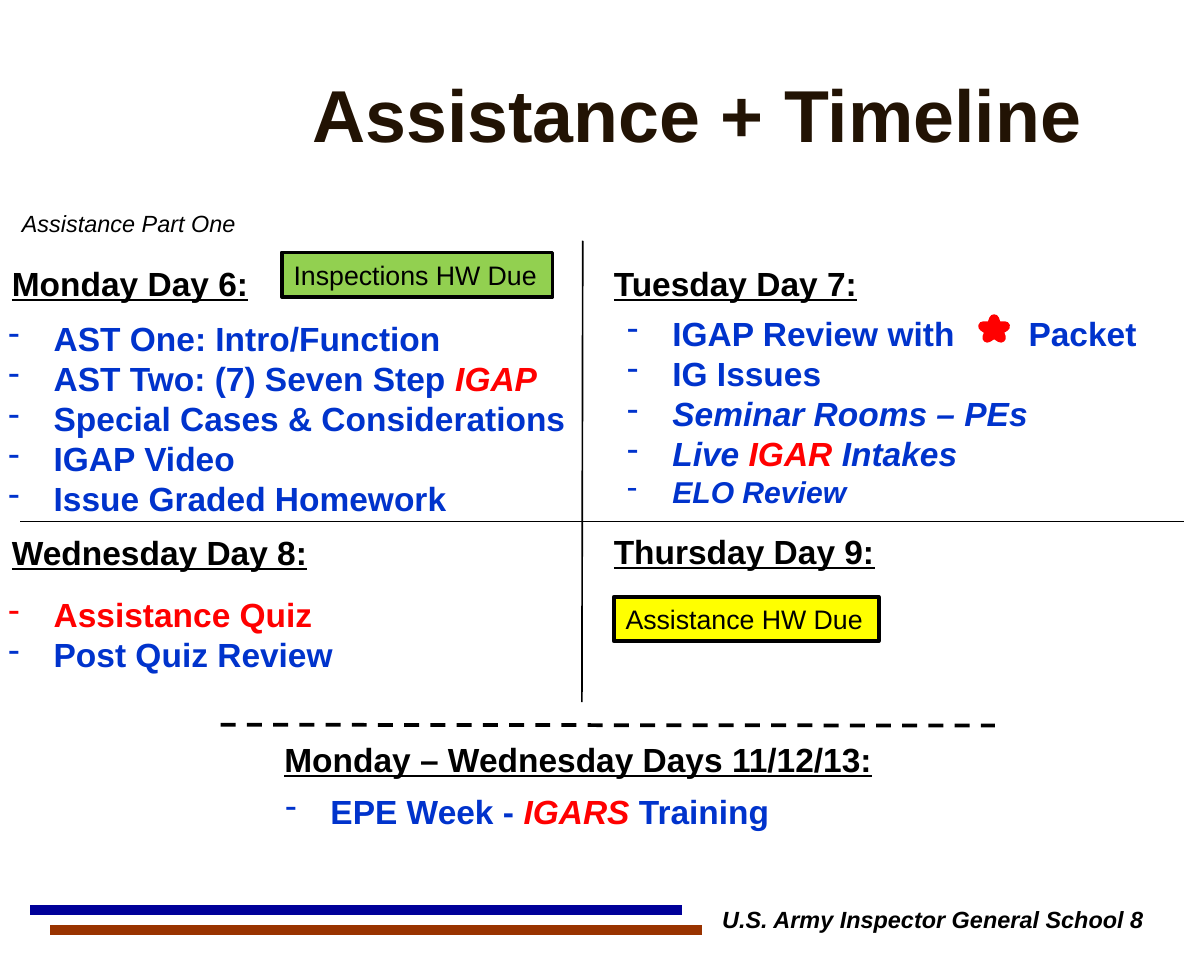
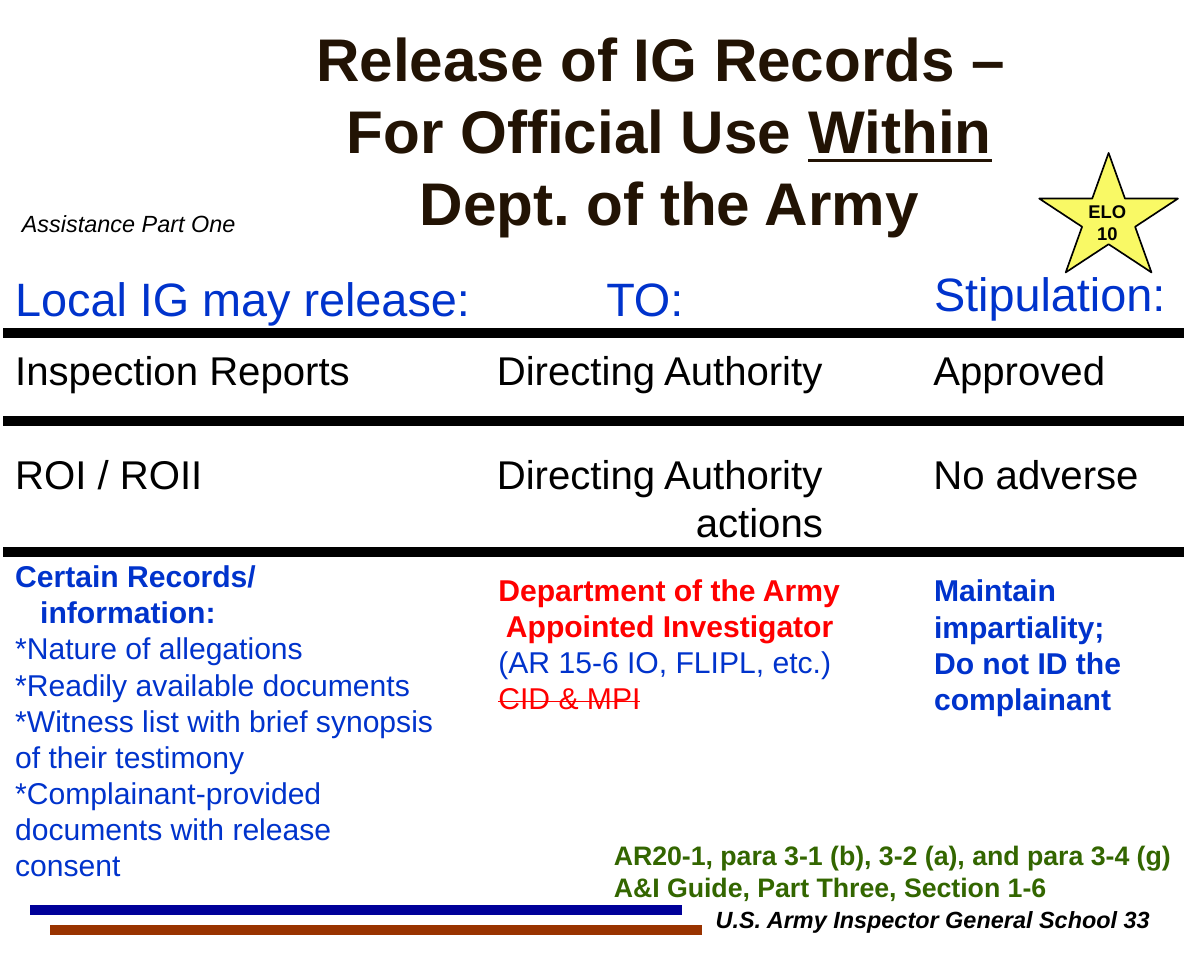
from lxml.etree import SubElement
from pptx import Presentation
from pptx.dml.color import RGBColor
from pptx.enum.dml import MSO_LINE
from pptx.enum.shapes import MSO_CONNECTOR, MSO_SHAPE
from pptx.enum.text import MSO_ANCHOR, MSO_AUTO_SIZE, PP_ALIGN
from pptx.oxml.ns import qn
from pptx.util import Pt

FONT = "Arial"
COLORS = {
    "black": "000000", "title": "221304", "navy": "000099", "rust": "993300",
    "blue": "0033CC", "red": "FF0000", "green": "92D050", "yellow": "FFFF00",
    "star": "F9F965", "reference": "336600",
}
HANG = 27  # hanging indent of the dashed lists


def rgb(name):
    return RGBColor.from_string(COLORS[name])


# Text
def style_font(font, size=None, color=None, bold=None, italic=None, underline=None):
    if size:
        font.name = FONT
        font.size = Pt(size)
    if color:
        font.color.rgb = rgb(color)
    if bold is not None:
        font.bold = bold
    if italic is not None:
        font.italic = italic
    if underline is not None:
        font.underline = underline


def add_span(para, text, strike=False, **look):
    for number, piece in enumerate(text.split("\v")):
        if number:
            para.add_line_break()
        if piece:
            span = para.add_run()
            span.text = piece
            style_font(span.font, **look)
            if strike:
                span.font._element.set("strike", "sngStrike")


def format_para(para, hang=0, bullet=None, tabs=()):
    properties = para._p.get_or_add_pPr()
    if hang:
        properties.set("marL", str(Pt(hang)))
        properties.set("indent", str(-Pt(hang)))
    if bullet:
        SubElement(properties, qn("a:buChar")).set("char", bullet)
    if tabs:
        stops = SubElement(properties, qn("a:tabLst"))
        for position in tabs:
            stop = SubElement(stops, qn("a:tab"))
            stop.set("pos", str(Pt(position)))
            stop.set("algn", "l")


def write(frame, lines, size, color, align=PP_ALIGN.LEFT, before=0, **look):
    """Each line is a string or (spans, overrides); a span is a string or (text, look)."""
    for number, line in enumerate(lines):
        para = frame.paragraphs[0] if number == 0 else frame.add_paragraph()
        spans, extra = line if isinstance(line, tuple) else ([line], {})
        settings = {"size": size, "color": color, **look, **extra}
        layout = {key: settings.pop(key) for key in ("hang", "bullet", "tabs")
                  if key in settings}
        para.alignment = align
        if number and before:
            para.space_before = Pt(before)
        format_para(para, **layout)
        style_font(para.font, **settings)
        for span in spans:
            text, own = span if isinstance(span, tuple) else (span, {})
            add_span(para, text, **own)


def add_text(page, box, lines, size, color="black", wrap=True, **look):
    shape = page.shapes.add_textbox(*map(Pt, box))
    shape.text_frame.word_wrap = wrap
    write(shape.text_frame, lines, size, color, **look)


# Lines and shapes
def add_line(page, start, end, width, color="black", dash=None):
    line = page.shapes.add_connector(MSO_CONNECTOR.STRAIGHT, *map(Pt, start + end))
    line.line.color.rgb = rgb(color)
    line.line.width = Pt(width)
    if dash:
        line.line.dash_style = dash
    SubElement(line._element.spPr, qn("a:effectLst"))


def add_shape(page, kind, box, fill, outline, width):
    shape = page.shapes.add_shape(kind, *map(Pt, box))
    shape.shadow.inherit = False
    shape.fill.solid()
    shape.fill.fore_color.rgb = rgb(fill)
    shape.line.color.rgb = rgb(outline)
    shape.line.width = Pt(width)
    return shape


def add_due_label(page, box, text, fill):
    label = add_shape(page, MSO_SHAPE.RECTANGLE, box, fill, "black", 2.25)
    label.text_frame.word_wrap = False
    write(label.text_frame, [text], 16, "black")


# Shared page frame
def add_page(deck, number, title_box, title_spans, title_size):
    page = deck.slides.add_slide(deck.slide_layouts[5])
    add_line(page, (18, 544.5), (408, 544.5), 6, "navy")
    add_line(page, (30, 556.5), (420, 556.5), 6, "rust")
    add_text(page, (6, 121.5, 324, 38), ["Assistance Part One"], 14, italic=True)
    add_text(page, (396, 538, 324, 38), [f"U.S. Army Inspector General School {number}"],
             14, align=PP_ALIGN.CENTER, bold=True, italic=True)
    title = page.shapes.title
    title.left, title.top, title.width, title.height = map(Pt, title_box)
    frame = title.text_frame
    frame.word_wrap = True
    frame.auto_size = MSO_AUTO_SIZE.NONE
    frame.vertical_anchor = MSO_ANCHOR.MIDDLE
    write(frame, [(title_spans, {})], title_size, "title", PP_ALIGN.CENTER, bold=True)
    return page


# One day of the timeline: underlined heading with a dashed list below
def add_day(page, corner, heading, width, items=(), list_box=None):
    left, top = corner
    add_text(page, (left, top, width, 31.5), [heading], 20, wrap=False,
             bold=True, underline=True)
    if items:
        shift, drop, list_width, list_height = list_box
        add_text(page, (left + shift, top + drop, list_width, list_height), items, 20,
                 "blue", bold=True, hang=HANG, bullet="-")


def build_timeline(deck):
    page = add_page(deck, 8, (132, 19.5, 570, 96), ["Assistance + Timeline"], 44)
    red_italic = {"color": "red", "italic": True}
    # Grid
    add_line(page, (348.5, 144), (348, 420), 1)
    add_line(page, (12, 312), (708, 312), 1)
    add_line(page, (132, 433.5), (595, 434), 2.25, dash=MSO_LINE.DASH)
    # Days
    add_day(page, (0, 153.5), "Monday Day 6:", 157, [
        "AST One: Intro/Function",
        (["AST Two: (7) Seven Step ", ("IGAP", red_italic)], {}),
        "Special Cases & Considerations",
        "IGAP Video",
        "Issue Graded Homework",
    ], (-2, 33, 356, 128))
    add_day(page, (360, 153.5), "Tuesday Day 7:", 161, [
        (["IGAP Review with\tPacket"], {"tabs": [240]}),
        "IG Issues",
        (["Seminar Rooms – PEs"], {"italic": True}),
        (["Live ", ("IGAR ", {"color": "red"}), "Intakes"], {"italic": True}),
        (["ELO Review"], {"italic": True, "size": 18}),
    ], (8, 30, 349, 126))
    add_day(page, (0, 314.5), "Wednesday Day 8:", 193, [
        (["Assistance Quiz"], {"color": "red"}),
        "Post Quiz Review",
    ], (-2, 37.5, 215, 55.5))
    add_day(page, (360, 314), "Thursday Day 9:", 171.5)
    add_day(page, (163, 438.5), "Monday – Wednesday Days 11/12/13:", 368.5, [
        (["EPE Week - ", ("IGARS", red_italic), " Training"], {}),
    ], (0.5, 31, 312, 31.5))
    # Homework labels and packet star
    add_due_label(page, (168.5, 151, 162, 26.5), "Inspections HW Due", "green")
    add_due_label(page, (367, 357, 158.5, 26.5), "Assistance HW Due", "yellow")
    add_shape(page, MSO_SHAPE.STAR_5_POINT, (588, 191, 13, 11), "red", "red", 6)


def add_elo_star(page, box, number):
    left, top, width, height = box
    add_shape(page, MSO_SHAPE.STAR_5_POINT, box, "star", "black", 1)
    add_text(page, (left + 6, top + 24.5, width - 13.5, height - 37.5), ["ELO", number],
             11, align=PP_ALIGN.CENTER, bold=True)


def add_release_grid(page, left, top, width):
    # Column headings
    for shift, drop, span_width, heading in (
            (0, 2.5, 288, "Local IG may release:"),
            (353.5, 2.5, 66, "TO:"),
            (549.5, 0, 158.5, "Stipulation:")):
        add_text(page, (left + shift, top + drop, span_width, 41), [heading], 28, "blue")
    # Report rows
    add_text(page, (left, top + 48, width, 157.5), [
        "Inspection Reports\tDirecting Authority\tApproved",
        "ROI / ROII\tDirecting Authority\tNo adverse\v\t\tactions",
    ], 24, before=33.5, tabs=[288, 407, 549])
    for drop in (44, 97, 175):
        add_line(page, (left, top + drop), (left + width - 2, top + drop), 6)
    # Record details
    plain = {"bold": False}
    add_text(page, (left, top + 175, 268, 237.5), [
        (["Certain Records/\vinformation:"], {"hang": 15}),
        (["*Nature of allegations"], plain),
        (["*Readily available documents"], plain),
        (["*Witness list with brief synopsis of their testimony"], plain),
        (["*Complainant-provided documents with release consent"], plain),
    ], 18, "blue", bold=True)
    add_text(page, (left + 289, top + 183, 219, 94.5), [
        (["Department of the Army\vAppointed Investigator"],
         {"hang": 4.5, "color": "red", "bold": True}),
        "(AR 15-6 IO, FLIPL, etc.)",
        ([("CID & MPI", {"strike": True})], {"color": "red"}),
    ], 18, "blue")
    add_text(page, (left + 549.5, top + 183.5, 158.5, 128),
             ["Maintain impartiality;", "Do not ID the complainant"], 18, "blue", bold=True)


def build_release(deck):
    title = ["Release of IG Records – \vFor Official Use ",
             ("Within", {"underline": True}), "\vDept. of the Army"]
    page = add_page(deck, 33, (124.5, 29.5, 551.5, 96), title, 36)
    add_release_grid(page, 2, 155, 708)
    add_elo_star(page, (621.5, 91.5, 83, 71.5), "10")
    add_text(page, (360, 498, 360, 46), [
        "AR20-1, para 3-1 (b), 3-2 (a), and para 3-4 (g)",
        "A&I Guide, Part Three, Section 1-6",
    ], 16, "reference", bold=True)


def main():
    deck = Presentation()
    deck.slide_width, deck.slide_height = Pt(720), Pt(576)
    build_timeline(deck)
    build_release(deck)
    deck.save("out.pptx")


if __name__ == "__main__":
    main()
